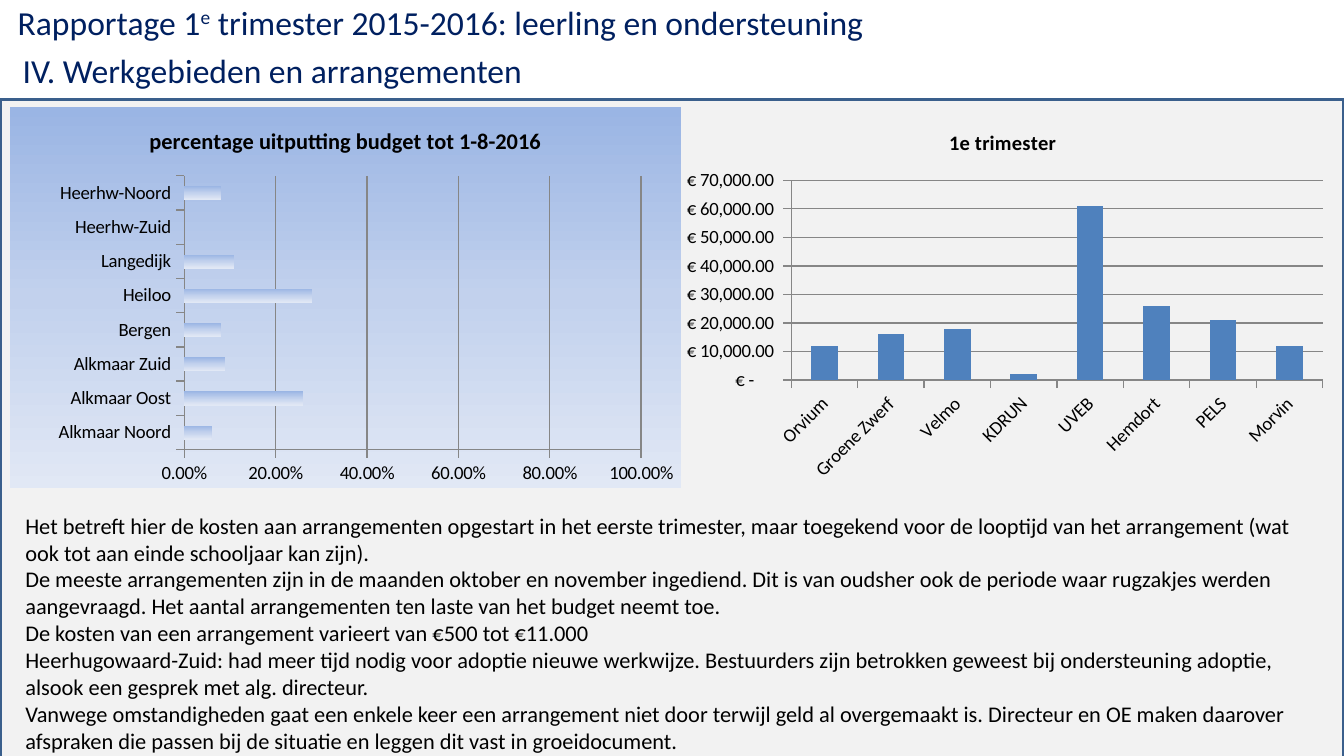
from lxml import etree
from pptx import Presentation
from pptx import util as u
from pptx.chart.data import CategoryChartData
from pptx.dml.color import RGBColor
from pptx.enum import chart as ch, shapes, text
from pptx.oxml import parse_xml
from pptx.oxml.ns import nsdecls, qn

NAVY = RGBColor(0x00, 0x20, 0x60)
BLACK = RGBColor(0, 0, 0)
PANEL = RGBColor(0xF2, 0xF2, 0xF2)
BORDER = RGBColor(0x3A, 0x5F, 0x8C)
BAR = RGBColor(0x4F, 0x81, 0xBD)
GRID = RGBColor(0x86, 0x86, 0x86)
GRADIENT = [(0, "9AB5E4"), (50, "C2D1ED"), (100, "E1E8F5")]
FONT = "Calibri"

TITLE = ["Rapportage 1", "e", " trimester 2015-2016: leerling en ondersteuning"]
SUBTITLE = "IV. Werkgebieden en arrangementen"
NOTES = [
    "Het betreft hier de kosten aan arrangementen opgestart in het eerste trimester, maar "
    "toegekend voor de looptijd van het arrangement (wat ook tot aan einde schooljaar kan zijn).",
    "De meeste arrangementen zijn in de maanden oktober en november ingediend. Dit is van oudsher "
    "ook de periode waar rugzakjes werden aangevraagd. Het aantal arrangementen ten laste van het "
    "budget neemt toe.",
    "De kosten van een arrangement varieert van €500 tot €11.000",
    "Heerhugowaard-Zuid: had meer tijd nodig voor adoptie nieuwe werkwijze. Bestuurders zijn "
    "betrokken geweest bij ondersteuning adoptie, alsook een gesprek met alg. directeur.",
    "Vanwege omstandigheden gaat een enkele keer een arrangement niet door terwijl geld al "
    "overgemaakt is. Directeur en OE maken daarover afspraken die passen bij de situatie en "
    "leggen dit vast in groeidocument.",
]
EURO = r'_ [$€-413]\ * #,##0.00_ ;_ [$€-413]\ * \-#,##0.00_ ;_ [$€-413]\ * "-"??_ ;_ @_ '
BUDGET = {
    "title": "percentage uitputting budget tot 1-8-2016", "title_size": 12,
    "series": "Series 1", "format": "0.00%",
    "values": {"Alkmaar Noord": 0.06, "Alkmaar Oost": 0.26, "Alkmaar Zuid": 0.09,
               "Bergen": 0.08, "Heiloo": 0.28, "Langedijk": 0.11,
               "Heerhw-Zuid": 0, "Heerhw-Noord": 0.08},
}
COSTS = {
    "title": "1e trimester", "title_size": 11,
    "series": "1e trimester", "format": EURO,
    "values": {"Orvium": 12000, "Groene Zwerf": 16000, "Velmo": 18000, "KDRUN": 2000,
               "UVEB": 61000, "Hemdort": 26000, "PELS": 21000, "Morvin": 12000},
}


def place(*lengths):
    return [u.Cm(v) for v in lengths]


def style_text(tf, size, color):
    tf.word_wrap = True
    tf.auto_size = text.MSO_AUTO_SIZE.NONE
    tf.vertical_anchor = text.MSO_ANCHOR.TOP
    for p in tf.paragraphs:
        p.alignment = text.PP_ALIGN.LEFT
        p.font.name, p.font.size = FONT, u.Pt(size)
        p.font.color.rgb = color


def add_text(s, box, lines, size, color):
    tf = s.shapes.add_textbox(*place(*box)).text_frame
    tf.text = "\n".join(lines)
    style_text(tf, size, color)


def gradient():
    """Return a new top-to-bottom gradient fill element."""
    stops = "".join(f'<a:gs pos="{pos * 1000}"><a:srgbClr val="{rgb}"/></a:gs>'
                    for pos, rgb in GRADIENT)
    return parse_xml(f'<a:gradFill {nsdecls("a")} rotWithShape="1"><a:gsLst>{stops}</a:gsLst>'
                     '<a:lin ang="5400000" scaled="0"/></a:gradFill>')


def add_chart(s, kind, box, content):
    data = CategoryChartData(number_format=content["format"])
    data.categories = list(content["values"])
    data.add_series(content["series"], list(content["values"].values()))
    chart = s.shapes.add_chart(kind, *place(*box), data).chart
    chart.has_legend = False
    chart.font.name, chart.font.size = FONT, u.Pt(10)
    chart.font.color.rgb = BLACK

    chart.has_title = True
    chart.chart_title.include_in_layout = False
    tf = chart.chart_title.text_frame
    tf.text = content["title"]
    font = tf.paragraphs[0].font
    font.name, font.size, font.bold = FONT, u.Pt(content["title_size"]), True
    font.color.rgb = BLACK

    plot = chart.plots[0]
    plot.gap_width, plot.vary_by_categories = 150, False
    val, cat = chart.value_axis, chart.category_axis
    val.has_major_gridlines, cat.has_major_gridlines = True, False
    for line in (val.format.line, cat.format.line, val.major_gridlines.format.line):
        line.color.rgb, line.width = GRID, u.Pt(0.75)
    for axis in (val, cat):
        axis.major_tick_mark = ch.XL_TICK_MARK.OUTSIDE
    val.tick_labels.number_format = content["format"]
    val.tick_labels.number_format_is_linked = False
    return chart


def set_plot_layout(chart, x, y, w, h):
    """Fix the inner plot area, as fractions of the chart."""
    area = chart._chartSpace.find(".//" + qn("c:plotArea"))
    for old in area.findall(qn("c:layout")):
        area.remove(old)
    layout = etree.Element(qn("c:layout"))
    manual = etree.SubElement(layout, qn("c:manualLayout"))
    settings = {"layoutTarget": "inner", "xMode": "edge", "yMode": "edge",
                "x": x, "y": y, "w": w, "h": h}
    for tag, value in settings.items():
        etree.SubElement(manual, qn("c:" + tag)).set("val", str(value))
    area.insert(0, layout)


def main():
    prs = Presentation()
    prs.slide_width, prs.slide_height = place(25.4, 14.29)
    s = prs.slides.add_slide(prs.slide_layouts[5])

    title = s.shapes.title
    title.left, title.top, title.width, title.height = place(0.08, -0.1, 20.2, 1.02)
    p = title.text_frame.paragraphs[0]
    for part in TITLE:
        p.add_run().text = part
    p.runs[1].font._element.set("baseline", "30000")
    style_text(title.text_frame, 18, NAVY)

    panel = s.shapes.add_shape(shapes.MSO_SHAPE.RECTANGLE, *place(0, 1.88, 25.4, 12.55))
    panel.shadow.inherit = False
    panel.fill.solid()
    panel.fill.fore_color.rgb = PANEL
    panel.line.color.rgb, panel.line.width = BORDER, u.Pt(2)

    add_text(s, (0.18, 0.81, 11.13, 1.02), [SUBTITLE], 18, NAVY)

    budget = add_chart(s, ch.XL_CHART_TYPE.BAR_CLUSTERED, (0.18, 2.03, 12.7, 7.19), BUDGET)
    budget.value_axis.minimum_scale, budget.value_axis.maximum_scale = 0, 1
    set_plot_layout(budget, 0.26, 0.18, 0.68, 0.72)
    budget.plots[0].series[0]._element.get_or_add_spPr().append(gradient())
    background = etree.Element(qn("c:spPr"))
    background.append(gradient())
    etree.SubElement(etree.SubElement(background, qn("a:ln")), qn("a:noFill"))
    budget._chartSpace.find(qn("c:chart")).addnext(background)

    costs = add_chart(s, ch.XL_CHART_TYPE.COLUMN_CLUSTERED, (12.65, 2.08, 12.6, 7.14), COSTS)
    fill = costs.plots[0].series[0].format.fill
    fill.solid()
    fill.fore_color.rgb = BAR

    add_text(s, (0.23, 9.55, 25.15, 4.88), NOTES, 12, BLACK)
    prs.save("out.pptx")


if __name__ == "__main__":
    main()
